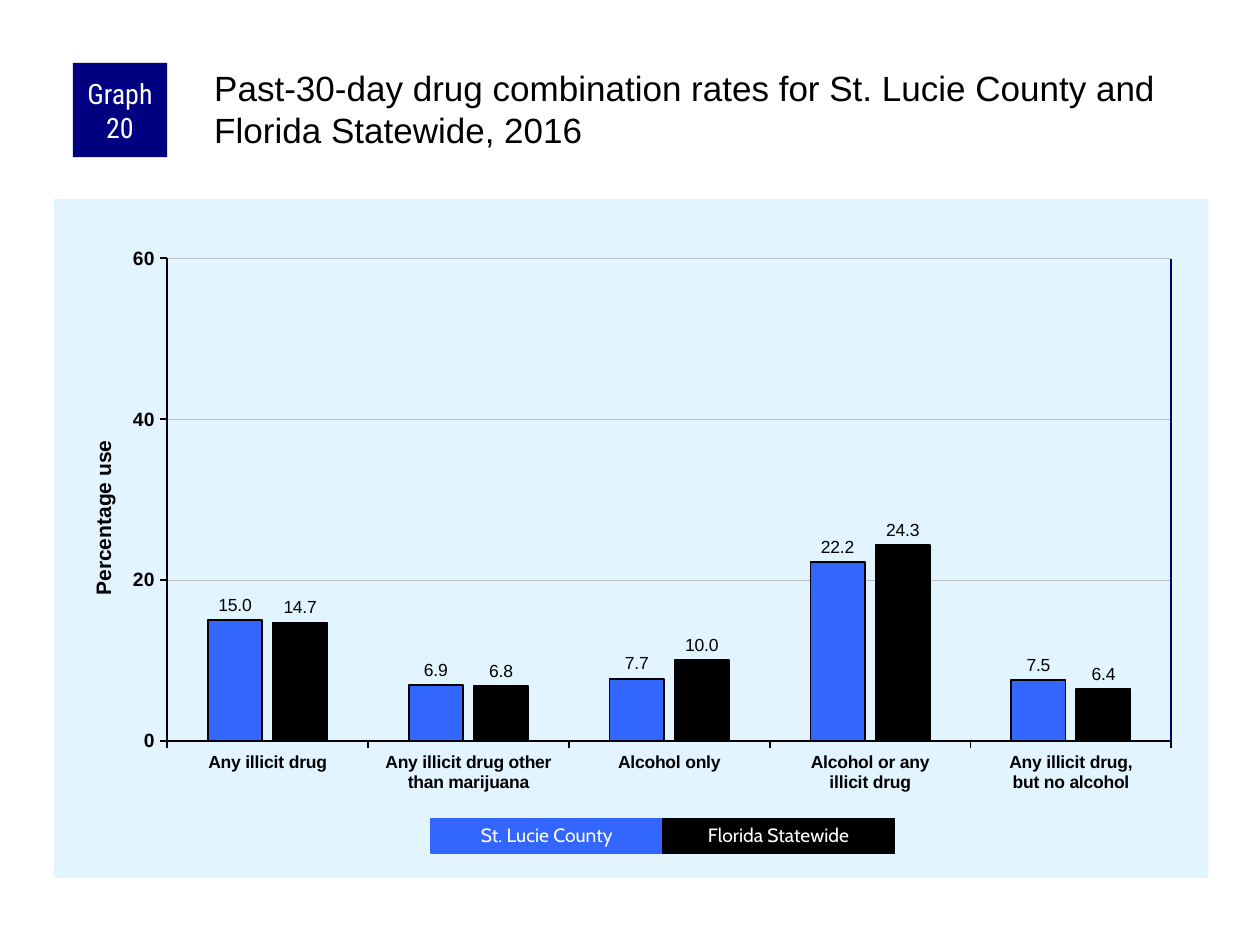
from lxml.etree import fromstring
from pptx import Presentation
from pptx.chart.data import CategoryChartData as Data
from pptx.dml.color import RGBColor as RGB
from pptx.enum.chart import XL_CHART_TYPE as Kind, XL_LABEL_POSITION as Pos
from pptx.enum.chart import XL_TICK_MARK as Tick
from pptx.enum.shapes import MSO_CONNECTOR as Conn, MSO_SHAPE as Shape
from pptx.enum.text import MSO_ANCHOR as Anchor, PP_ALIGN as Align
from pptx.oxml import parse_xml
from pptx.oxml.ns import nsdecls, qn
from pptx.util import Cm, Pt

HUES = {k: RGB.from_string(v) for k, v in {
    "navy": "000080", "blue": "3366FF", "black": "000000",
    "white": "FFFFFF", "pale": "E1F4FF", "grey": "C0C0C0"}.items()}


def style(font, size, hue="black", name="Arial", bold=False):
    font.size, font.name, font.bold = Pt(size), name, bold
    font.color.rgb = HUES[hue]


def lay(part, spot, head="", **sides):
    """Give a chart part a fixed layout, as shares of the chart."""
    for old in part.findall(qn("c:layout")):
        part.remove(old)
    body = "".join(f'<c:{k}Mode val="edge"/>' for k in "xy")
    body += "".join(f'<c:{k} val="{v}"/>' for k, v in sides.items())
    part.insert(spot, parse_xml(
        f'<c:layout {nsdecls("c")}><c:manualLayout>{head}{body}'
        '</c:manualLayout></c:layout>'))


deck = Presentation()
deck.slide_width, deck.slide_height = Cm(25.4), Cm(19.05)
slide = deck.slides.add_slide(deck.slide_layouts[6])
shapes = slide.shapes

# Chart
data = Data(number_format="0.0")
data.categories = [
    "Any illicit drug", "Any illicit drug other than marijuana",
    "Alcohol only", "Alcohol or any\nillicit drug",
    "Any illicit drug,\nbut no alcohol"]
data.add_series("St. Lucie County", [15, 6.9, 7.7, 22.2, 7.5])
data.add_series("Florida Statewide", [14.7, 6.8, 10, 24.3, 6.4])
chart = shapes.add_chart(Kind.COLUMN_CLUSTERED, Cm(1.09), Cm(4.01),
                         Cm(23.27), Cm(13.69), data).chart
chart.has_legend = chart.has_title = False
style(chart.font, 11.5)
space = chart.element
space.find(qn("c:chart")).addnext(parse_xml(
    f'<c:spPr {nsdecls("c", "a")}><a:solidFill><a:srgbClr val="{HUES["pale"]}"/>'
    '</a:solidFill><a:ln><a:noFill/></a:ln></c:spPr>'))
lay(space.find(".//" + qn("c:plotArea")), 0,
    '<c:layoutTarget val="inner"/>', x=0.098, y=0.087, w=0.87, h=0.711)

# Columns
plot = chart.plots[0]
plot.gap_width, plot.overlap, plot.vary_by_categories = 150, -20, False
for row, hue in zip(plot.series, ("blue", "black")):
    row.format.fill.solid()
    row.format.fill.fore_color.rgb = HUES[hue]
    row.format.line.color.rgb = HUES["black"]
    row.format.line.width = Pt(1)
    tags = row.data_labels
    tags.show_value, tags.position = True, Pos.OUTSIDE_END
    tags.number_format, tags.number_format_is_linked = "0.0", False
    style(tags.font, 10)

# Axes
cat, val = chart.category_axis, chart.value_axis
for axis, size in ((cat, 10), (val, 11)):
    axis.major_tick_mark, axis.minor_tick_mark = Tick.OUTSIDE, Tick.NONE
    axis.format.line.color.rgb = HUES["black"]
    axis.format.line.width = Pt(1)
    style(axis.tick_labels.font, size, bold=True)
val.minimum_scale, val.maximum_scale, val.major_unit = 0, 60, 20
val.tick_labels.number_format = "0"
val.tick_labels.number_format_is_linked = False
grid = val.major_gridlines.format.line
grid.color.rgb, grid.width = HUES["grey"], Pt(0.25)
name = val.axis_title.text_frame
name.text = "Percentage use"
style(name.paragraphs[0].font, 12, bold=True)
lay(val.axis_title._element, 1, x=0.028, y=0.35)

# Right edge of the plot
edge = shapes.add_connector(Conn.STRAIGHT, Cm(23.61), Cm(5.22), Cm(23.61), Cm(14.94))
edge.line.color.rgb, edge.line.width = HUES["navy"], Pt(1)
edge._element.spPr.append(fromstring(f'<a:effectLst {nsdecls("a")}/>'))

# Graph number and legend keys
for text, at, hue, font, size, lead in (
        ("Graph 20", (1.47, 1.27, 1.9, 1.9), "navy", "Roboto Condensed", 16, 1),
        ("St. Lucie County", (8.69, 16.51, 4.67, 0.69), "blue", "Cabin", 11, 0.9),
        ("Florida Statewide", (13.36, 16.51, 4.67, 0.69), "black", "Cabin", 11, 0.9)):
    box = shapes.add_shape(Shape.RECTANGLE, *map(Cm, at))
    box.shadow.inherit = False
    box.fill.solid()
    box.fill.fore_color.rgb = box.line.color.rgb = HUES[hue]
    box.line.width = Pt(0.75)
    if hue == "navy":
        box.line.fill.background()
    frame = box.text_frame
    frame.word_wrap, frame.vertical_anchor = True, Anchor.MIDDLE
    frame.margin_left = frame.margin_right = Cm(0.13)
    frame.margin_top = frame.margin_bottom = 0
    frame.text = text
    para = frame.paragraphs[0]
    para.alignment, para.line_spacing = Align.CENTER, lead
    style(para.font, size, "white", font)

# Title
frame = shapes.add_textbox(Cm(4.24), Cm(1.27), Cm(20.12), Cm(2.11)).text_frame
frame.word_wrap = True
frame.margin_left = frame.margin_top = Cm(0.08)
frame.margin_right = frame.margin_bottom = 0
frame.text = ("Past-30-day drug combination rates for St. Lucie County and "
              "Florida Statewide, 2016")
style(frame.paragraphs[0].font, 20)

deck.save("out.pptx")
